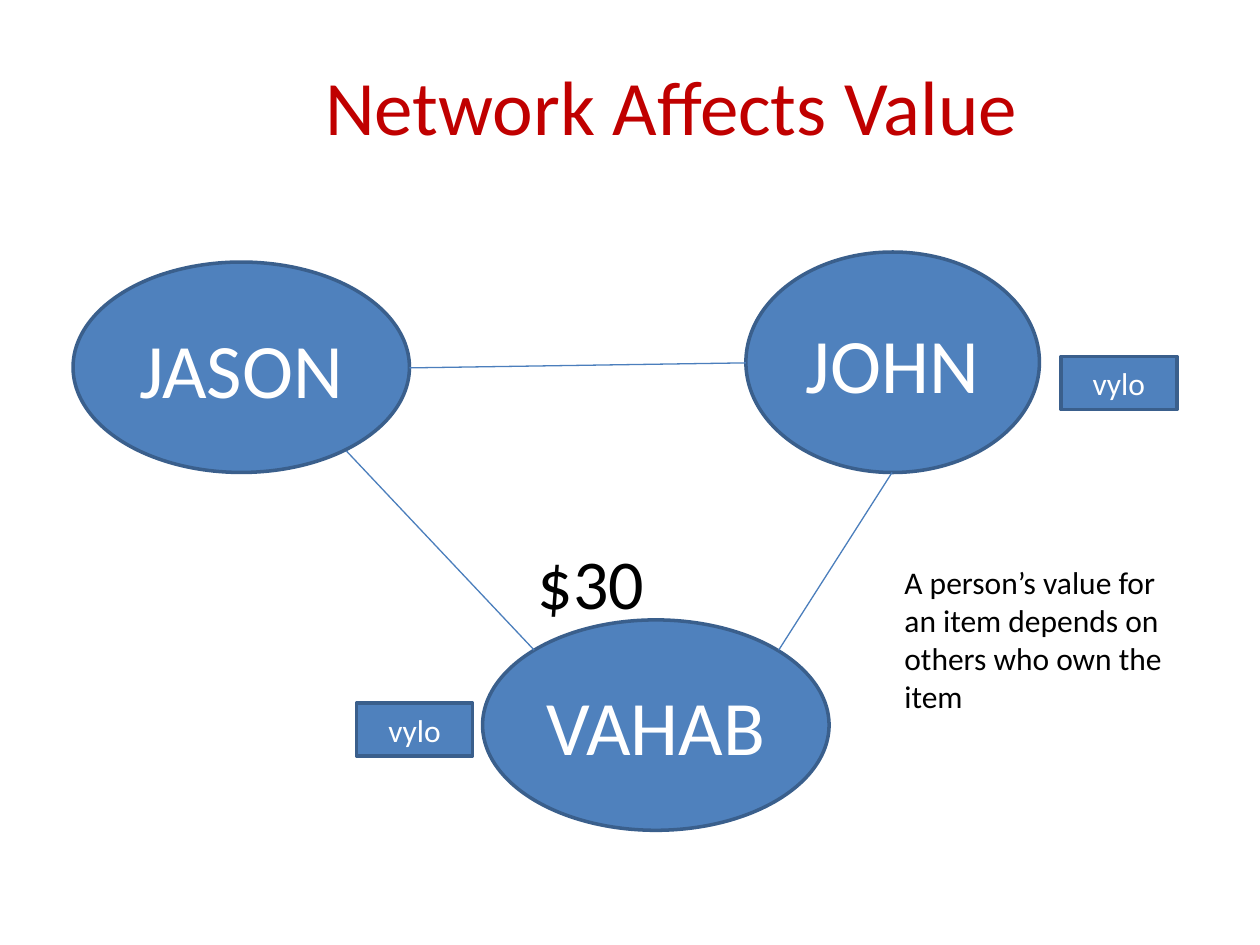
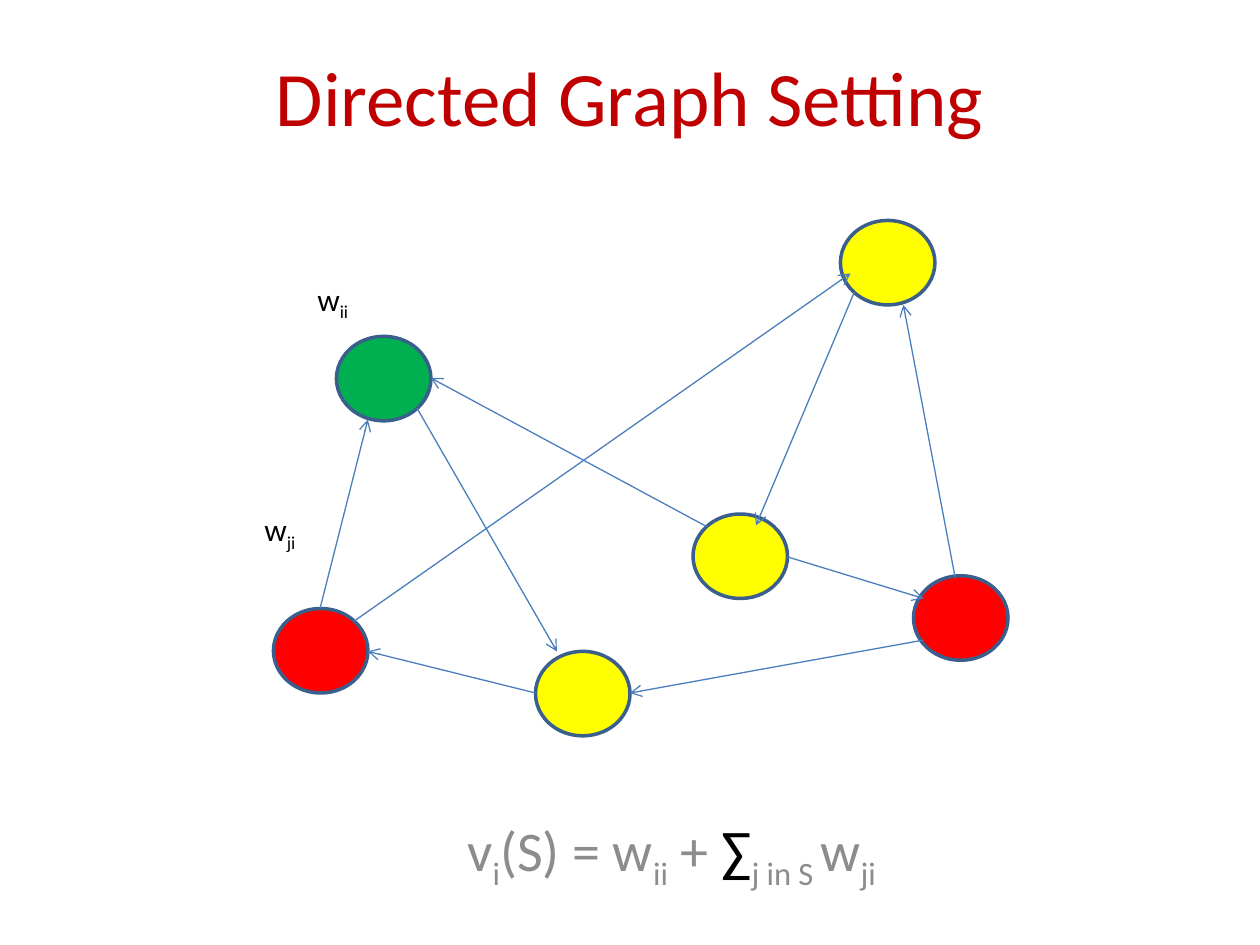
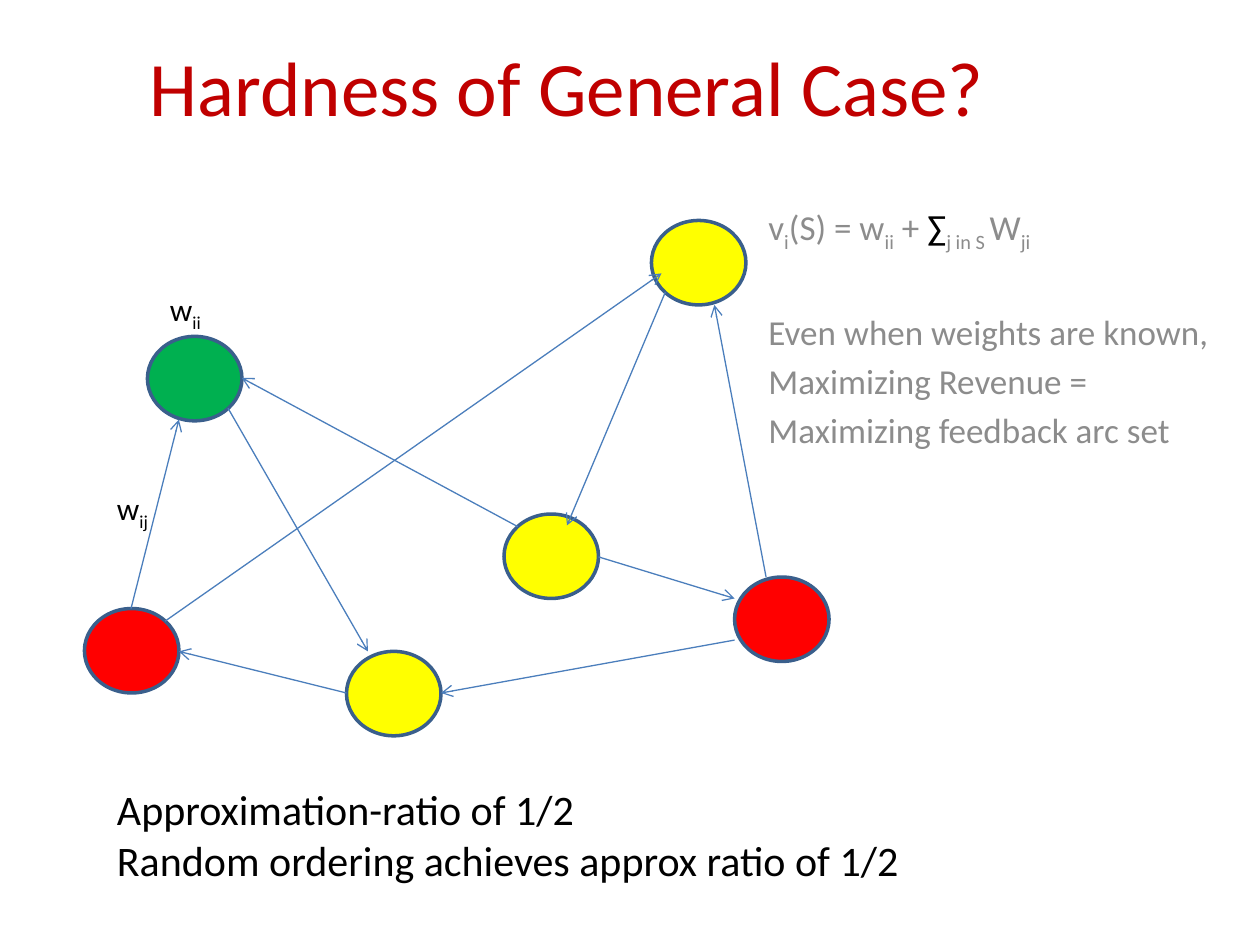
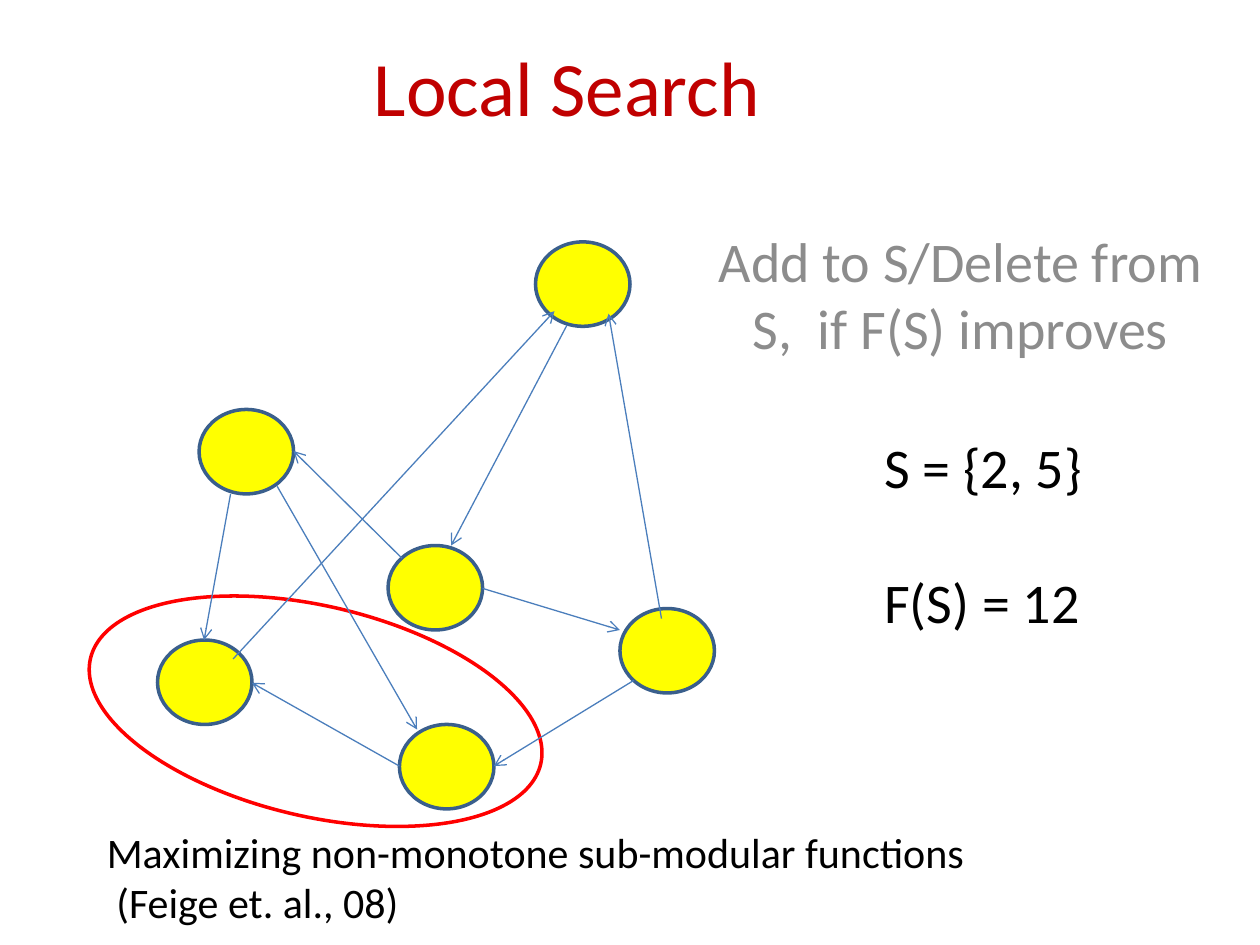
from dataclasses import dataclass
from itertools import groupby

from lxml import etree
from pptx import Presentation
from pptx import util as u
from pptx.dml.color import RGBColor
from pptx.enum import shapes, text
from pptx.oxml.ns import qn

PX = 9144  # one px is a hundredth of an inch
FONT = "Calibri"
COLORS = {
    "title": "C00000", "body": "000000", "muted": "8C8C8C", "light": "FFFFFF",
    "blue": "4F81BD", "outline": "3A5F8C", "edge": "4B7EBC",
    "yellow": "FFFF00", "green": "00B050", "red": "FF0000",
}
OVAL = shapes.MSO_SHAPE.OVAL
BOX = shapes.MSO_SHAPE.RECTANGLE
CENTER = text.PP_ALIGN.CENTER
MIDDLE = text.MSO_ANCHOR.MIDDLE
NODE_SIZE = (75, 67)
FORMULA = "v[i](S) = w[ii] + ∑[j in S ]"


@dataclass(frozen=True)
class Block:
    """A filled shape, with a label if it has one."""
    left: int
    top: int
    width: int
    height: int
    fill: str = "blue"
    outline: str = "outline"
    label: str = ""
    size: int = 44
    kind: shapes.MSO_SHAPE = OVAL
    rotation: float = 0


@dataclass(frozen=True)
class Edge:
    x1: int
    y1: int
    x2: int
    y2: int


def color(name: str) -> RGBColor:
    return RGBColor.from_string(COLORS[name])


def write(frame, content: str, *, size: float, ink: str = "body", align=None,
          anchor=text.MSO_ANCHOR.TOP, before: float = 0, gaps=None) -> None:
    """Fill a frame: one paragraph a line, [..] is subscript, ∑ is always black."""
    frame.vertical_anchor = anchor
    for index, line in enumerate(content.split("\n")):
        paragraph = frame.paragraphs[0] if index == 0 else frame.add_paragraph()
        paragraph.alignment = align
        paragraph.space_before = u.Pt((gaps or {}).get(index, before))
        for part, piece in enumerate(line.replace("]", "[").split("[")):
            for is_sum, letters in groupby(piece, lambda letter: letter == "∑"):
                run = paragraph.add_run()
                run.text = "".join(letters)
                run.font.size = u.Pt(size)
                run.font.name = FONT
                run.font.color.rgb = color("body" if is_sum else ink)
                if part % 2:
                    run.font._element.set("baseline", "-25000")


def add_text(slide, at: tuple[int, int, int, int], content: str, *,
             wrap: bool = True, top_inset: int = 5, bottom_inset: int = 5, **style) -> None:
    frame = slide.shapes.add_textbox(*(side * PX for side in at)).text_frame
    frame.word_wrap = wrap
    frame.margin_top = top_inset * PX
    frame.margin_bottom = bottom_inset * PX
    write(frame, content, **style)


def add_title(slide, at: tuple[int, int, int, int], content: str, bottom_inset: int = 80) -> None:
    add_text(slide, at, content, bottom_inset=bottom_inset, size=44, ink="title",
             align=CENTER, anchor=MIDDLE)


def add_block(slide, block: Block) -> None:
    at = (block.left, block.top, block.width, block.height)
    shape = slide.shapes.add_shape(block.kind, *(side * PX for side in at))
    shape.shadow.inherit = False
    shape.rotation = block.rotation
    shape.fill.solid()
    shape.fill.fore_color.rgb = color(block.fill)
    shape.line.color.rgb = color(block.outline)
    shape.line.width = u.Pt(2)
    if block.label:
        write(shape.text_frame, block.label, size=block.size, ink="light",
              align=CENTER, anchor=MIDDLE)


def add_edge(slide, edge: Edge, arrow: bool = True) -> None:
    ends = (edge.x1, edge.y1, edge.x2, edge.y2)
    line = slide.shapes.add_connector(shapes.MSO_CONNECTOR.STRAIGHT, *(end * PX for end in ends))
    line.line.color.rgb = color("edge")
    line.line.width = u.Pt(0.75)
    if arrow:
        etree.SubElement(line.line._get_or_add_ln(), qn("a:tailEnd"), type="arrow")
    etree.SubElement(line._element.spPr, qn("a:effectLst"))


def add_graph(slide, nodes, edges, shift: int = 0) -> None:
    """Draw circles (left, top, fill) and arrows, moved sideways by shift."""
    for left, top, fill in nodes:
        add_block(slide, Block(left + shift, top, *NODE_SIZE, fill=fill))
    for x1, y1, x2, y2 in edges:
        add_edge(slide, Edge(x1 + shift, y1, x2 + shift, y2))


# Graph shared by the setting and hardness slides
SETTING_NODES = [
    (667, 175, "yellow"), (267, 267, "green"), (550, 408, "yellow"),
    (425, 517, "yellow"), (217, 483, "red"),
]
SETTING_EDGES = [
    (758, 458, 717, 242), (625, 442, 733, 475), (678, 232, 600, 417),
    (281, 493, 675, 217), (733, 508, 500, 550), (425, 550, 292, 517),
    (254, 483, 292, 333), (331, 324, 442, 517), (561, 418, 342, 300),
]
SEARCH_NODES = [
    (left, top, "yellow") for left, top in
    [(425, 192), (158, 325), (308, 433), (492, 483), (317, 575), (125, 508)]
]
SEARCH_EDGES = [
    (525, 491, 483, 249), (383, 467, 492, 500), (450, 258, 358, 433),
    (185, 523, 440, 247), (503, 540, 392, 608), (317, 608, 200, 542),
    (220, 386, 331, 579), (319, 443, 233, 358), (183, 392, 162, 508),
]


def build_network(slide) -> None:
    add_title(slide, (108, 25, 850, 117), "Network Affects Value", bottom_inset=5)
    people = [
        Block(592, 200, 233, 175, label="JOHN"),
        Block(383, 492, 275, 167, label="VAHAB"),
        Block(58, 208, 267, 167, label="JASON"),
    ]
    gadgets = [Block(left, top, 92, 42, label="vylo", size=18, kind=BOX)
               for left, top in [(842, 283), (283, 558)]]
    for block in people + gadgets:
        add_block(slide, block)
    for tie in [Edge(325, 292, 592, 288), Edge(275, 358, 424, 516), Edge(708, 375, 618, 516)]:
        add_edge(slide, tie, arrow=False)
    add_text(slide, (417, 423, 125, 77), "$30", size=40)
    add_text(slide, (708, 442, 233, 131),
             "A person’s value for an item depends on others who own the item", size=18)


def build_setting(slide) -> None:
    add_title(slide, (75, 33, 850, 161), "Directed Graph Setting")
    add_graph(slide, SETTING_NODES + [(725, 457, "red")], SETTING_EDGES)
    add_text(slide, (183, 642, 700, 75), FORMULA + "w[ji]",
             size=32, ink="muted", align=CENTER, before=6.4)
    add_text(slide, (242, 217, 46, 40), "w[ii]", size=18, wrap=False)
    add_text(slide, (200, 400, 54, 40), "w[ji]", size=18)


def build_hardness(slide) -> None:
    add_title(slide, (25, 25, 850, 161), "Hardness of General Case?")
    add_graph(slide, SETTING_NODES + [(733, 458, "red")], SETTING_EDGES, shift=-150)
    add_text(slide, (600, 158, 375, 292),
             FORMULA + "W[ji]\nEven when weights are known,\n"
             "Maximizing Revenue =\nMaximizing feedback arc set",
             size=20, ink="muted", before=4, gaps={1: 33})
    add_text(slide, (83, 617, 742, 91),
             "Approximation-ratio of 1/2\nRandom ordering achieves approx ratio of 1/2", size=24)
    add_text(slide, (125, 225, 58, 40), "w[ii]", size=18)
    add_text(slide, (83, 383, 50, 40), "w[ij]", size=18)


def build_search(slide) -> None:
    # Ring around the chosen set, behind everything else
    add_block(slide, Block(67, 481, 367, 167, fill="light", outline="red", rotation=13.2))
    add_title(slide, (25, 25, 850, 161), "Local Search")
    add_graph(slide, SEARCH_NODES, SEARCH_EDGES)
    add_text(slide, (692, 308, 217, 232), "S = {2, 5}\nF(S) = 12",
             size=32, top_inset=35, gaps={1: 39})
    add_text(slide, (550, 175, 425, 142), "Add to S/Delete from S,  if F(S) improves",
             size=32, ink="muted", align=CENTER, before=6.4)
    add_text(slide, (75, 651, 867, 91),
             "Maximizing non-monotone sub-modular functions\n (Feige et. al., 08)", size=24)


def main() -> None:
    deck = Presentation()
    deck.slide_width, deck.slide_height = 1000 * PX, 750 * PX
    for build in (build_network, build_setting, build_hardness, build_search):
        build(deck.slides.add_slide(deck.slide_layouts[6]))
    deck.save("out.pptx")


if __name__ == "__main__":
    main()
